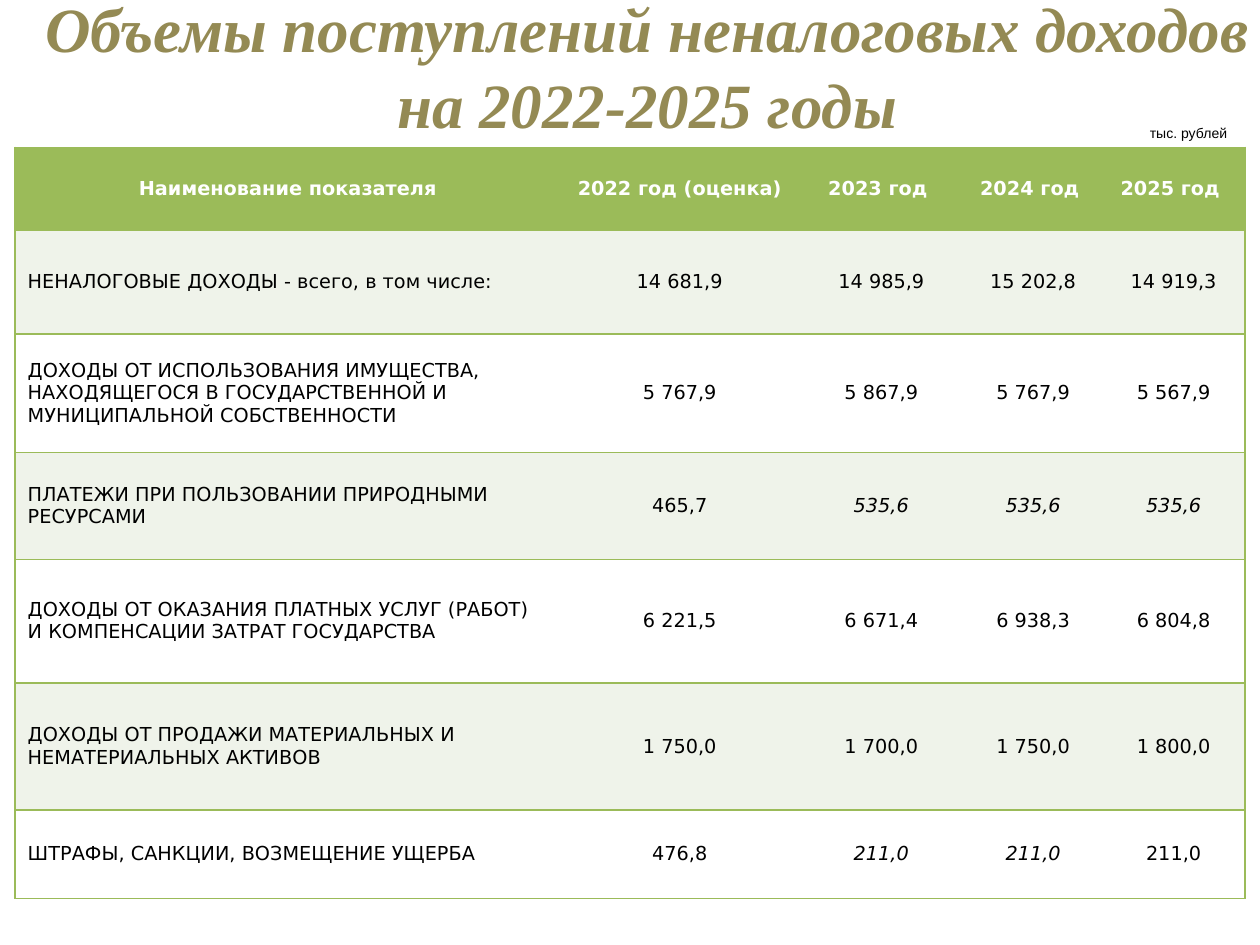
import pptx
import pptx.dml.color
import pptx.enum.text
import pptx.oxml.ns
import pptx.util
from lxml import etree

Inches = pptx.util.Inches
Pt = pptx.util.Pt
RGBColor = pptx.dml.color.RGBColor
ALIGN = pptx.enum.text.PP_ALIGN
ANCHOR = pptx.enum.text.MSO_ANCHOR
AUTO_SIZE = pptx.enum.text.MSO_AUTO_SIZE
qn = pptx.oxml.ns.qn

GREEN = RGBColor(0x9B, 0xBB, 0x59)
PALE_GREEN = RGBColor(0xEF, 0xF3, 0xEA)
WHITE = RGBColor(0xFF, 0xFF, 0xFF)
BLACK = RGBColor(0, 0, 0)
OLIVE = RGBColor(0x94, 0x8A, 0x54)

COLUMN_WIDTHS = [4.33, 1.89, 1.31, 1.1, 1.13]
ROW_HEIGHTS = [0.66, 0.82, 0.94, 0.85, 0.98, 1.01, 0.7]
INCOME = [
    ["Наименование показателя", "2022 год (оценка)", "2023 год ", "2024 год ", "2025 год "],
    ["НЕНАЛОГОВЫЕ ДОХОДЫ - всего, в том числе:",
     "14 681,9", "14 985,9", "15 202,8", "14 919,3"],
    ["ДОХОДЫ ОТ ИСПОЛЬЗОВАНИЯ ИМУЩЕСТВА, НАХОДЯЩЕГОСЯ В ГОСУДАРСТВЕННОЙ "
     "И МУНИЦИПАЛЬНОЙ СОБСТВЕННОСТИ", "5 767,9", "5 867,9", "5 767,9", "5 567,9"],
    ["ПЛАТЕЖИ ПРИ ПОЛЬЗОВАНИИ ПРИРОДНЫМИ РЕСУРСАМИ",
     "465,7", "535,6", "535,6", "535,6"],
    ["ДОХОДЫ ОТ ОКАЗАНИЯ ПЛАТНЫХ УСЛУГ (РАБОТ) И КОМПЕНСАЦИИ ЗАТРАТ ГОСУДАРСТВА",
     "6 221,5", "6 671,4", "6 938,3", "6 804,8"],
    ["ДОХОДЫ ОТ ПРОДАЖИ МАТЕРИАЛЬНЫХ И НЕМАТЕРИАЛЬНЫХ АКТИВОВ",
     "1 750,0", "1 700,0", "1 750,0", "1 800,0"],
    ["ШТРАФЫ, САНКЦИИ, ВОЗМЕЩЕНИЕ УЩЕРБА",
     "476,8", "211,0", "211,0", "211,0"],
]
ITALIC_CELLS = {(3, 2), (3, 3), (3, 4), (6, 2), (6, 3)}


def add_run(paragraph, text, font_name, size, color, bold=False, italic=False):
    run = paragraph.add_run()
    run.text = text
    font = run.font
    font.name, font.size = font_name, Pt(size)
    font.bold, font.italic = bold, italic
    font.color.rgb = color


def place(shape, left, top, width, height):
    shape.left, shape.top = Inches(left), Inches(top)
    shape.width, shape.height = Inches(width), Inches(height)


def add_title(slide):
    title = slide.shapes.title
    place(title, -0.59, 0.21, 10.67, 0.62)
    frame = title.text_frame
    frame.word_wrap = True
    frame.auto_size = AUTO_SIZE.NONE
    frame.vertical_anchor = ANCHOR.MIDDLE
    paragraph = frame.paragraphs[0]
    paragraph.alignment = ALIGN.CENTER
    properties = paragraph._p.get_or_add_pPr()
    properties.set("marL", str(Inches(0.78)))
    properties.set("indent", "0")
    add_run(paragraph, "Объемы поступлений неналоговых доходов на 2022-2025 годы",
            "Times New Roman", 36, OLIVE, bold=True, italic=True)


def add_unit_note(slide):
    note = slide.shapes.add_textbox(Inches(9.01), Inches(0.94), Inches(0.83), Inches(0.24))
    note.text_frame.word_wrap = False
    paragraph = note.text_frame.paragraphs[0]
    paragraph.alignment = ALIGN.RIGHT
    add_run(paragraph, "тыс. рублей", "Arial", 8, BLACK)


def set_borders(cell, visible_sides):
    properties = cell._tc.get_or_add_tcPr()
    for side in "LRTB":
        line = etree.SubElement(properties, qn(f"a:ln{side}"), w=str(Pt(1)))
        if side in visible_sides:
            fill = etree.SubElement(line, qn("a:solidFill"))
            etree.SubElement(fill, qn("a:srgbClr"), val=str(GREEN))
        else:
            etree.SubElement(line, qn("a:noFill"))


def fill_cell(cell, text, row, column):
    is_header = row == 0
    # Rules between rows, sides only on the outer edges
    sides = "TB"
    if column == 0:
        sides += "L"
    if column == len(COLUMN_WIDTHS) - 1:
        sides += "R"
    set_borders(cell, sides)
    cell.fill.solid()
    cell.fill.fore_color.rgb = GREEN if is_header else PALE_GREEN if row % 2 else WHITE
    cell.vertical_anchor = ANCHOR.MIDDLE
    paragraph = cell.text_frame.paragraphs[0]
    paragraph.alignment = ALIGN.CENTER if is_header or column else ALIGN.LEFT
    add_run(paragraph, text, "DejaVu Sans", 11, WHITE if is_header else BLACK,
            bold=is_header, italic=(row, column) in ITALIC_CELLS)


def add_income_table(slide):
    table = slide.shapes.add_table(
        len(ROW_HEIGHTS), len(COLUMN_WIDTHS), Inches(0.12), Inches(1.17),
        Inches(sum(COLUMN_WIDTHS)), Inches(sum(ROW_HEIGHTS))).table
    for column, width in zip(table.columns, COLUMN_WIDTHS):
        column.width = Inches(width)
    for row, height in zip(table.rows, ROW_HEIGHTS):
        row.height = Inches(height)
    for row, texts in enumerate(INCOME):
        for column, text in enumerate(texts):
            fill_cell(table.cell(row, column), text, row, column)


def main():
    presentation = pptx.Presentation()
    presentation.slide_width = Inches(10)
    presentation.slide_height = Inches(7.5)
    slide = presentation.slides.add_slide(presentation.slide_layouts[5])
    add_income_table(slide)
    add_unit_note(slide)
    add_title(slide)
    presentation.save("out.pptx")


if __name__ == "__main__":
    main()
